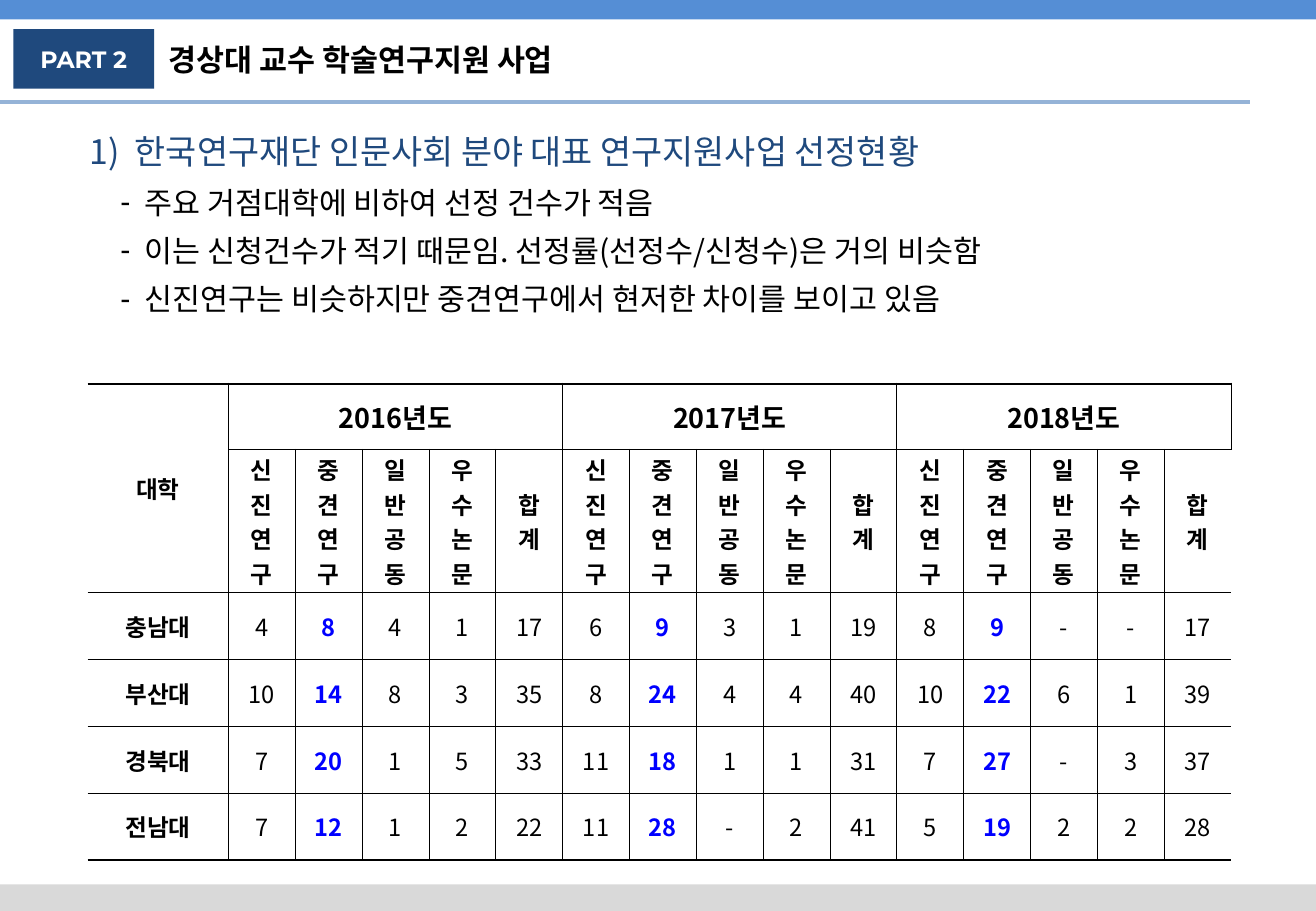
from lxml import etree
from pptx import Presentation
from pptx import util as u
from pptx.dml.color import RGBColor
from pptx.enum import shapes, text
from pptx.oxml import ns

COLORS = {
    "navy": "1F497D", "blue": "558ED5", "pale": "95B3D7", "gray": "D9D9D9",
    "black": "000000", "white": "FFFFFF", "accent": "0000FF",
}
KOREAN = "Noto Sans CJK KR"
LATIN = "Montserrat"


def style(paragraph, size, color="black", bold=False, face=KOREAN):
    font = paragraph.font
    font.size, font.bold, font.name = u.Pt(size), bold, face
    font.color.rgb = RGBColor.from_string(COLORS[color])
    for run in paragraph.runs:
        east_asian = etree.SubElement(run._r.get_or_add_rPr(), ns.qn("a:ea"))
        east_asian.set("typeface", KOREAN)


def block(left, top, width, height, color):
    rect = slide.shapes.add_shape(
        shapes.MSO_SHAPE.RECTANGLE,
        u.Inches(left), u.Inches(top), u.Inches(width), u.Inches(height))
    rect.shadow.inherit = False
    rect.fill.solid()
    rect.fill.fore_color.rgb = RGBColor.from_string(COLORS[color])
    rect.line.fill.background()
    return rect


prs = Presentation()
prs.slide_width, prs.slide_height = u.Inches(10.83), u.Inches(7.5)
slide = prs.slides.add_slide(prs.slide_layouts[1])

block(0, 7.28, 10.83, 0.22, "gray")
block(0, 0, 10.83, 0.16, "blue")
header_rule = slide.shapes.add_connector(
    shapes.MSO_CONNECTOR.STRAIGHT,
    u.Inches(0), u.Inches(0.84), u.Inches(10.29), u.Inches(0.84))
header_rule.line.width = u.Pt(2)
header_rule.line.color.rgb = RGBColor.from_string(COLORS["pale"])
etree.SubElement(header_rule._element.spPr, ns.qn("a:effectLst"))

part_label = block(0.11, 0.24, 1.16, 0.49, "navy")
part_label.text_frame.text = "PART 2"
part_label.text_frame.vertical_anchor = text.MSO_ANCHOR.MIDDLE
part_label.text_frame.paragraphs[0].alignment = text.PP_ALIGN.CENTER
style(part_label.text_frame.paragraphs[0], 14, "white", True, LATIN)

title = slide.shapes.title
title.left, title.top = u.Inches(1.29), u.Inches(0.29)
title.width, title.height = u.Inches(7.13), u.Inches(0.4)
title.text_frame.text = "경상대 교수 학술연구지원 사업"
title.text_frame.auto_size = text.MSO_AUTO_SIZE.NONE
title.text_frame.vertical_anchor = text.MSO_ANCHOR.MIDDLE
title.text_frame.paragraphs[0].alignment = text.PP_ALIGN.LEFT
style(title.text_frame.paragraphs[0], 18, "black", True, LATIN)

findings = slide.placeholders[1]
findings.left, findings.top = u.Inches(0.64), u.Inches(1.03)
findings.width, findings.height = u.Inches(9.33), u.Inches(1.89)
findings.text_frame.auto_size = text.MSO_AUTO_SIZE.NONE
findings.text_frame.text = "\n".join([
    "한국연구재단 인문사회 분야 대표 연구지원사업 선정현황",
    "주요 거점대학에 비하여 선정 건수가 적음",
    "이는 신청건수가 적기 때문임. 선정률(선정수/신청수)은 거의 비슷함",
    "신진연구는 비슷하지만 중견연구에서 현저한 차이를 보이고 있음",
])
for i, finding in enumerate(findings.text_frame.paragraphs):
    finding.space_before = u.Pt(0)
    finding.alignment = text.PP_ALIGN.JUSTIFY
    finding.line_spacing = 1.33 if i else 1.0
    margin, hanging = (0.45, 0.2) if i else (0.37, 0.37)
    props = finding._p.get_or_add_pPr()
    props.set("marL", str(u.Inches(margin)))
    props.set("indent", str(-u.Inches(hanging)))
    if i:
        etree.SubElement(props, ns.qn("a:buChar")).set("char", "-")
    else:
        etree.SubElement(props, ns.qn("a:buAutoNum")).set("type", "arabicParenR")
    style(finding, 18 if i else 20, "black" if i else "navy")

years = ["2016년도", "2017년도", "2018년도"]
programs = ["신진\n연구", "중견\n연구", "일반\n공동", "우수\n논문", "합계"]
selections = [
    ["충남대", 4, 8, 4, 1, 17, 6, 9, 3, 1, 19, 8, 9, "-", "-", 17],
    ["부산대", 10, 14, 8, 3, 35, 8, 24, 4, 4, 40, 10, 22, 6, 1, 39],
    ["경북대", 7, 20, 1, 5, 33, 11, 18, 1, 1, 31, 7, 27, "-", 3, 37],
    ["전남대", 7, 12, 1, 2, 22, 11, 28, "-", 2, 41, 5, 19, 2, 2, 28],
]
year_row = ["대학"]
for year in years:
    year_row += [year] + [""] * (len(programs) - 1)
rows = [year_row, [""] + programs * len(years)] + selections
last_row, last_col = len(rows) - 1, len(year_row) - 1

results = slide.shapes.add_table(
    len(rows), len(year_row),
    u.Inches(0.72), u.Inches(3.16), u.Inches(9.42), u.Inches(3.9)).table
results.first_row = results.horz_banding = False
for c, column in enumerate(results.columns):
    column.width = u.Inches(0.55 if c else 1.16)
for r, row in enumerate(results.rows):
    row.height = u.Inches(1.18 if r == 1 else 0.54 if r == 0 else 0.55)

for r, values in enumerate(rows):
    for c, value in enumerate(values):
        cell = results.cell(r, c)
        cell.vertical_anchor = text.MSO_ANCHOR.MIDDLE
        cell.margin_top = cell.margin_bottom = u.Inches(0.02)
        borders = {
            "lnL": 0.56 if c else 0,
            "lnR": 0.56 if c < last_col else 0,
            "lnT": 0.56 if r else 1.7,
            "lnB": 0.56 if r < last_row else 1.7,
        }
        for side, width in borders.items():
            edge = etree.SubElement(cell._tc.get_or_add_tcPr(), ns.qn(f"a:{side}"))
            edge.set("w", str(u.Pt(width)))
            if width:
                fill = etree.SubElement(edge, ns.qn("a:solidFill"))
                etree.SubElement(fill, ns.qn("a:srgbClr")).set("val", COLORS["black"])
            else:
                etree.SubElement(edge, ns.qn("a:noFill"))
        cell.fill.background()
        cell.text_frame.text = str(value)
        is_midcareer = r > 1 and c % len(programs) == 2
        for line in cell.text_frame.paragraphs:
            line.alignment = text.PP_ALIGN.CENTER
            style(line, 16 if r == 0 and c else 14,
                  "accent" if is_midcareer else "black",
                  r < 2 or c == 0 or is_midcareer)

results.cell(0, 0).merge(results.cell(1, 0))
for first in range(1, last_col, len(programs)):
    results.cell(0, first).merge(results.cell(0, first + len(programs) - 1))

prs.save("out.pptx")
